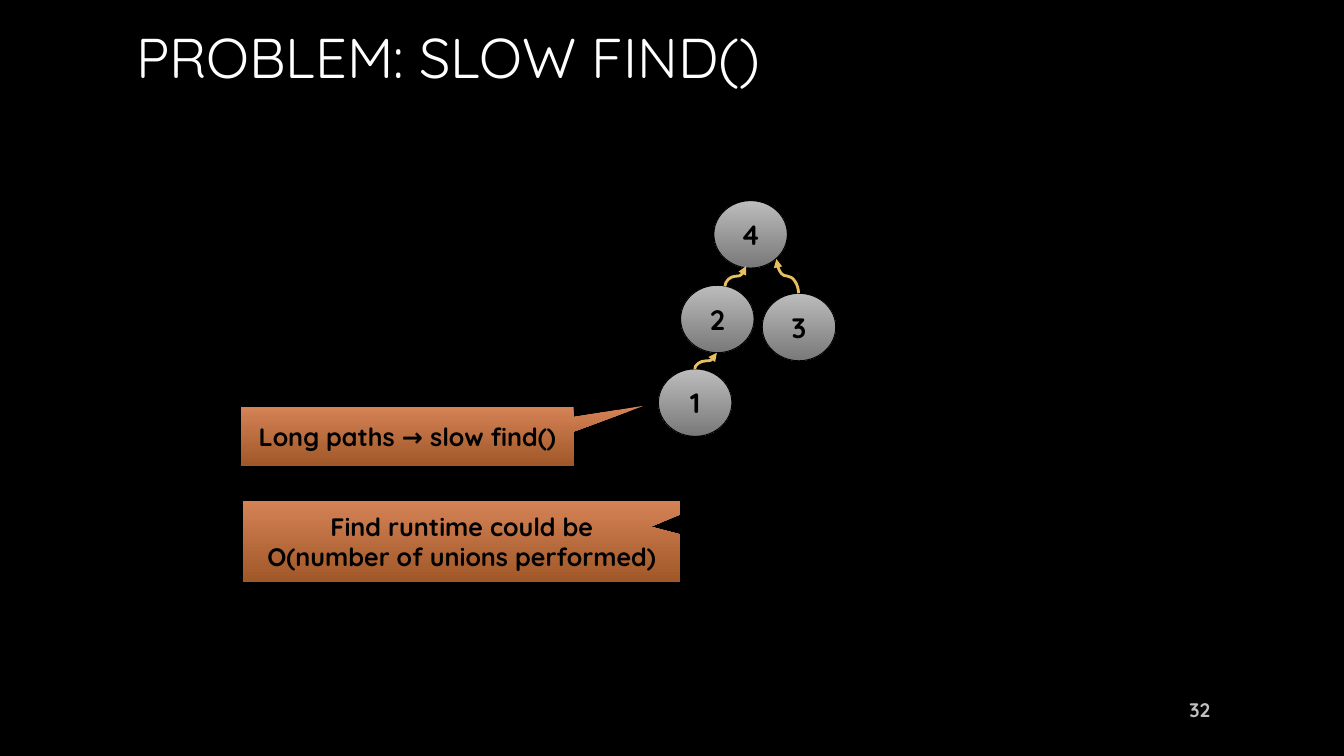
from lxml.etree import SubElement
from pptx import Presentation
from pptx.dml.color import RGBColor
from pptx.enum.shapes import MSO_CONNECTOR as Link, MSO_SHAPE as Shape
from pptx.enum.text import MSO_ANCHOR as Anchor, PP_ALIGN as Align
from pptx.oxml.ns import qn
from pptx.util import Inches, Pt

FONT = "Quicksand"
COLORS = {
    "background": "000000",
    "ink": "000000",
    "title_top": "FFFFFF",
    "title_bottom": "A6A6A6",
    "number": "BFBFBF",
    "node_top": "BCBCBC",
    "node_bottom": "797979",
    "callout_top": "D48256",
    "callout_bottom": "A15828",
    "arrow": "E7BF5F",
}
NODE_WIDTH, NODE_HEIGHT = 0.73, 0.67
NODES = {"4": (7.08, 1.99), "3": (7.56, 2.91), "2": (6.75, 2.83), "1": (6.53, 3.66)}
ARROWS = [
    ((7.92, 2.91), (7.7, 2.57)),
    ((6.89, 3.66), (7.11, 3.5)),
    ((7.19, 2.84), (7.4, 2.64)),
]
CALLOUTS = [
    ("Long paths → slow find()", (2.39, 4.04, 3.3, 0.58), (0.711, -0.526)),
    ("Find runtime could be\nO(number of unions performed)",
     (2.41, 4.97, 4.34, 0.8), (0.432, -0.181)),
]


def color(name):
    """Return the named colour."""
    return RGBColor.from_string(COLORS[name])


def shade(fill, name, angle=270):
    """Fill with the gradient between the named top and bottom colours."""
    fill.gradient()
    fill.gradient_angle = angle
    for stop, end in zip(fill.gradient_stops, ("top", "bottom")):
        stop.color.rgb = color(f"{name}_{end}")


def write(shape, text, size, align, bold=True):
    """Write one vertically centred paragraph and return its font."""
    frame = shape.text_frame
    frame.vertical_anchor = Anchor.MIDDLE
    para = frame.paragraphs[0]
    para.text = text
    para.alignment = align
    para.font.name, para.font.size, para.font.bold = FONT, Pt(size), bold
    return para.font


def add_title(page, text, box):
    """Place and format the title."""
    title = page.shapes.title
    title.left, title.top, title.width, title.height = map(Inches, box)
    font = write(title, text, 40, Align.LEFT, bold=False)
    shade(font.fill, "title", 267)


def add_number(page, text, box):
    """Place the page number."""
    number = page.shapes.add_textbox(*map(Inches, box))
    number.text_frame.word_wrap = True
    write(number, text, 14, Align.RIGHT).color.rgb = color("number")


def add_node(page, label, left, top):
    """Draw one labelled tree node."""
    box = (left, top, NODE_WIDTH, NODE_HEIGHT)
    node = page.shapes.add_shape(Shape.OVAL, *map(Inches, box))
    node.shadow.inherit = False
    shade(node.fill, "node")
    node.line.color.rgb = color("ink")
    node.line.width = Pt(0.75)
    node.text_frame.word_wrap = False
    write(node, label, 20, Align.CENTER).color.rgb = color("ink")


def add_arrow(page, start, end):
    """Draw a curved arrow that leaves and arrives vertically."""
    (x1, y1), (x2, y2) = start, end
    middle_x, middle_y = (x1 + x2) / 2, (y1 + y2) / 2
    half_rise, half_run = (y1 - y2) / 2, (x2 - x1) / 2
    points = (middle_x - half_rise, middle_y - half_run,
              middle_x + half_rise, middle_y + half_run)
    arrow = page.shapes.add_connector(Link.CURVE, *map(Inches, points))
    arrow.line.color.rgb = color("arrow")
    arrow.line.width = Pt(2)
    properties = arrow._element.spPr
    properties.find(qn("a:xfrm")).set("rot", str(270 * 60000))
    SubElement(properties.find(qn("a:ln")), qn("a:tailEnd"), type="triangle")
    SubElement(properties, qn("a:effectLst"))


def add_callout(page, text, box, tip):
    """Draw a callout whose tip is given relative to its centre."""
    callout = page.shapes.add_shape(Shape.RECTANGULAR_CALLOUT, *map(Inches, box))
    callout.adjustments[0], callout.adjustments[1] = tip
    shade(callout.fill, "callout")
    callout.line.fill.background()
    callout.shadow.inherit = False
    effects = callout._element.spPr.find(qn("a:effectLst"))
    shadow = SubElement(effects, qn("a:outerShdw"), blurRad=str(Pt(4)),
                        dist=str(Pt(3)), dir=str(90 * 60000), rotWithShape="0")
    tint = SubElement(shadow, qn("a:srgbClr"), val=COLORS["ink"])
    SubElement(tint, qn("a:alpha"), val="60000")
    callout.text_frame.word_wrap = True
    write(callout, text, 18, Align.CENTER).color.rgb = color("ink")


def add_tree(page):
    """Draw the nodes and the arrows to their parents."""
    for label, (left, top) in NODES.items():
        add_node(page, label, left, top)
    for start, end in ARROWS:
        add_arrow(page, start, end)


def main():
    """Build and save the slide."""
    deck = Presentation()
    deck.slide_width, deck.slide_height = Inches(13.33), Inches(7.5)
    page = deck.slides.add_slide(deck.slide_layouts[5])
    page.background.fill.solid()
    page.background.fill.fore_color.rgb = color("background")
    add_title(page, "PROBLEM: SLOW FIND()", (1.25, 0, 10.83, 1.12))
    add_number(page, "32", (11.5, 6.84, 0.6, 0.4))
    add_tree(page)
    for text, box, tip in CALLOUTS:
        add_callout(page, text, box, tip)
    deck.save("out.pptx")


if __name__ == "__main__":
    main()
